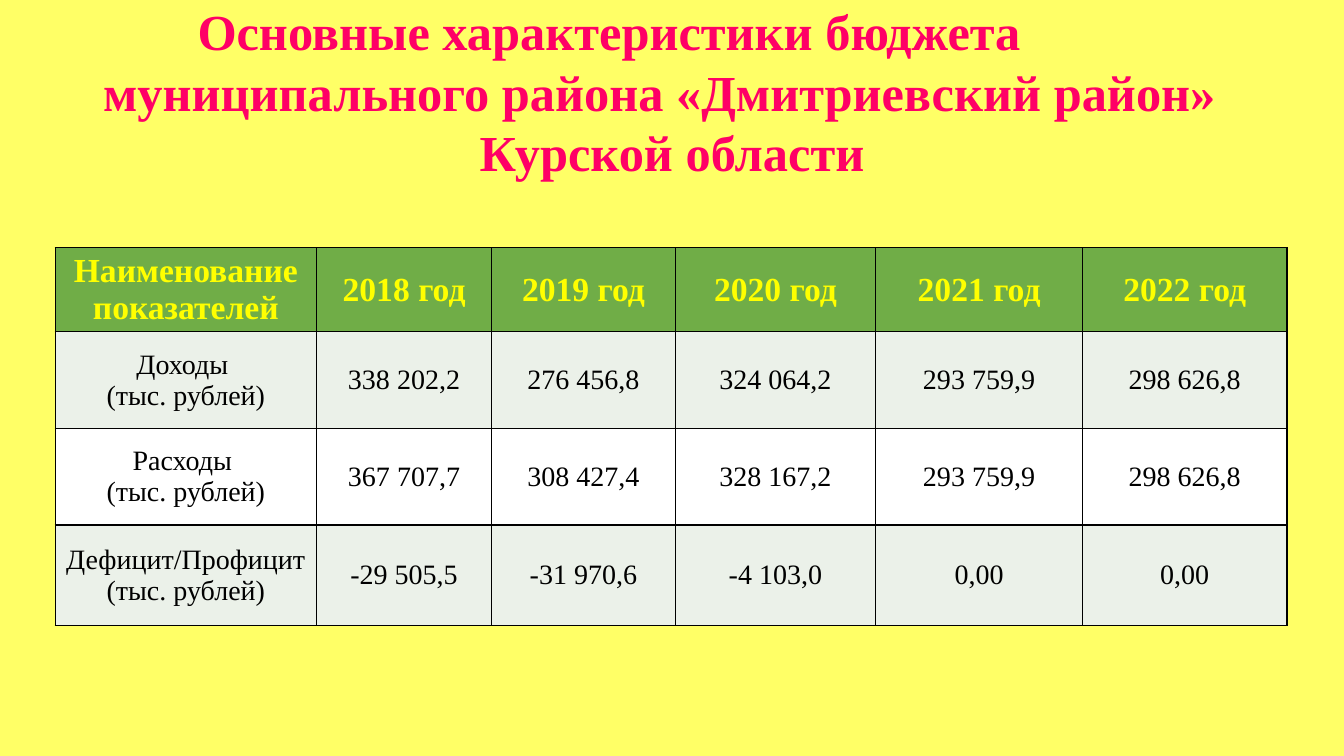
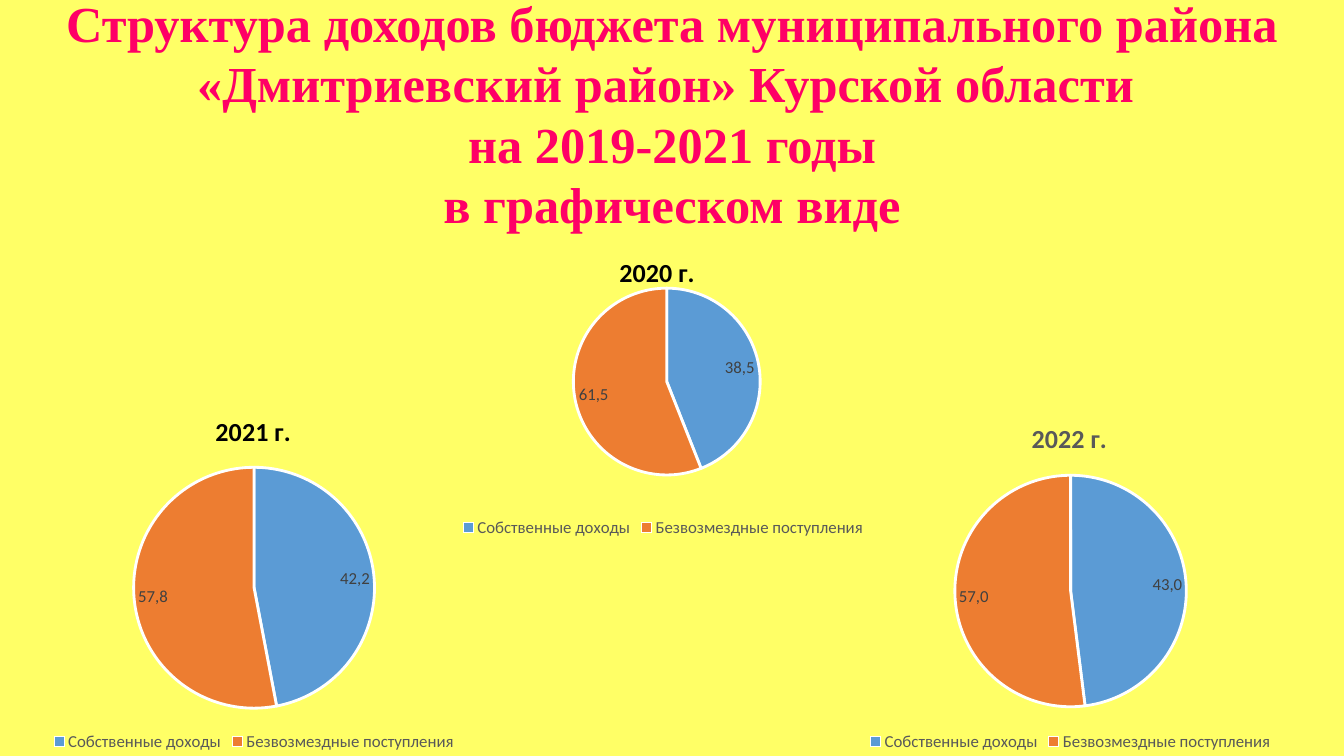
from lxml import etree
from pptx import Presentation
from pptx.chart import data as chart_data
from pptx.dml import color
from pptx.enum import chart as chart_enum, text
from pptx.oxml import ns
from pptx.util import Pt

WIDTH, HEIGHT = 960, 540
SERIF, SANS = "Times New Roman", "Calibri"
BACKGROUND, PINK, YELLOW = "FFFF66", "FF0066", "FFFF00"
GREEN, PALE, WHITE, BLACK = "70AD47", "EBF1E9", "FFFFFF", "000000"
BLUE, ORANGE, GREY, DARK_GREY = "5B9BD5", "ED7D31", "595959", "404040"

COLUMN_WIDTHS = [186.5, 125.3, 131, 143.3, 147.6, 146.2]
ROW_HEIGHTS = [60, 69, 69, 72]
BUDGET = [
    ["Наименование показателей"] + [f"{year} год" for year in range(2018, 2023)],
    ["Доходы \n(тыс. рублей)", "338 202,2", "276 456,8", "324 064,2", "293 759,9", "298 626,8"],
    ["Расходы \n(тыс. рублей)", "367 707,7", "308 427,4", "328 167,2", "293 759,9", "298 626,8"],
    ["Дефицит/Профицит\n(тыс. рублей)", "-29 505,5", "-31 970,6", "-4 103,0", "0,00", "0,00"],
]
ROW_FILLS = [GREEN, PALE, WHITE, PALE]

CATEGORIES = ["Собственные доходы", "Безвозмездные поступления"]
INCOME_CHARTS = [
    ("2020 г.", BLACK, 0.43, (225.4, 171.4, 496.8, 215.3), (0.02, 0.16, 0.97, 0.62), (44, 56), ("38,5", "61,5")),
    ("2021 г.", BLACK, 0.41, (9.4, 284.4, 344.2, 255.6), (0.25, 0.19, 0.5, 0.68), (47, 53), ("42,2", "57,8")),
    ("2022 г.", GREY, 0.42, (569.5, 289.4, 390.5, 250.6), (0.28, 0.2, 0.44, 0.66), (48, 52), ("43,0", "57,0")),
]


def rgb(value):
    return color.RGBColor.from_string(value)


def style_font(font, name, size, value, bold=False):
    font.name, font.size, font.bold = name, Pt(size), bold
    font.color.rgb = rgb(value)


def add_slide(presentation):
    slide = presentation.slides.add_slide(presentation.slide_layouts[6])
    slide.background.fill.solid()
    slide.background.fill.fore_color.rgb = rgb(BACKGROUND)
    return slide


def add_title(slide, height, lines, indents=()):
    shape = slide.shapes.add_textbox(0, 0, Pt(WIDTH), Pt(height))
    frame = shape.text_frame
    frame.word_wrap = True
    frame.vertical_anchor = text.MSO_ANCHOR.MIDDLE
    frame.text = "\n".join(lines)
    for paragraph in frame.paragraphs:
        paragraph.alignment = text.PP_ALIGN.CENTER
        paragraph.line_spacing = Pt(43.2)
        style_font(paragraph.runs[0].font, SERIF, 36, PINK, True)
    for paragraph, indent in zip(frame.paragraphs, indents):
        paragraph.alignment = text.PP_ALIGN.LEFT
        paragraph._p.get_or_add_pPr().set("marL", str(Pt(indent)))


def add_borders(cell):
    properties = cell._tc.get_or_add_tcPr()
    for position, side in enumerate("LRTB"):
        line = etree.Element(ns.qn(f"a:ln{side}"), w=str(Pt(1)))
        fill = etree.SubElement(line, ns.qn("a:solidFill"))
        etree.SubElement(fill, ns.qn("a:srgbClr"), val=BLACK)
        properties.insert(position, line)


def fill_cell(cell, content, fill, size, value, bold):
    cell.text_frame.text = content
    cell.vertical_anchor = text.MSO_ANCHOR.MIDDLE
    cell.margin_left = cell.margin_right = Pt(5)
    cell.margin_top = cell.margin_bottom = 0
    cell.fill.solid()
    cell.fill.fore_color.rgb = rgb(fill)
    for paragraph in cell.text_frame.paragraphs:
        paragraph.alignment = text.PP_ALIGN.CENTER
        style_font(paragraph.runs[0].font, SERIF, size, value, bold)
    add_borders(cell)


def add_budget_table(slide, left, top):
    table = slide.shapes.add_table(
        len(ROW_HEIGHTS), len(COLUMN_WIDTHS), Pt(left), Pt(top),
        Pt(sum(COLUMN_WIDTHS)), Pt(sum(ROW_HEIGHTS))).table
    for column, width in zip(table.columns, COLUMN_WIDTHS):
        column.width = Pt(width)
    for row, height, contents, fill in zip(table.rows, ROW_HEIGHTS, BUDGET, ROW_FILLS):
        row.height = Pt(height)
        style = (24, YELLOW, True) if fill == GREEN else (20, BLACK, False)
        for cell, content in zip(row.cells, contents):
            fill_cell(cell, content, fill, *style)


def set_layout(parent, position, settings):
    for old_layout in parent.findall(ns.qn("c:layout")):
        parent.remove(old_layout)
    layout = etree.Element(ns.qn("c:layout"))
    manual = etree.SubElement(layout, ns.qn("c:manualLayout"))
    for name, value in settings.items():
        etree.SubElement(manual, ns.qn(f"c:{name}"), val=str(value))
    parent.insert(position, layout)


def add_chart_title(chart, title, value, left):
    chart.has_title = True
    frame = chart.chart_title.text_frame
    frame.text = title
    style_font(frame.paragraphs[0].runs[0].font, SANS, 18.6, value, True)
    set_layout(chart.chart_title._element, 1, {
        "xMode": "edge", "yMode": "edge", "x": left, "y": 0.03})


def style_slice(point, fill, label):
    point.format.fill.solid()
    point.format.fill.fore_color.rgb = rgb(fill)
    point.format.line.color.rgb = rgb(WHITE)
    point.format.line.width = Pt(2)
    frame = point.data_label.text_frame
    frame.text = label
    style_font(frame.paragraphs[0].runs[0].font, SANS, 12, DARK_GREY)
    point.data_label.position = chart_enum.XL_LABEL_POSITION.BEST_FIT


def add_income_pie(slide, title, title_color, title_left, box, plot_box, values, labels):
    source = chart_data.CategoryChartData()
    source.categories = CATEGORIES
    source.add_series("Доходы", values)
    chart = slide.shapes.add_chart(
        chart_enum.XL_CHART_TYPE.PIE, *map(Pt, box), source).chart
    style_font(chart.font, SANS, 10, BLACK)
    add_chart_title(chart, title, title_color, title_left)
    chart.has_legend = True
    chart.legend.position = chart_enum.XL_LEGEND_POSITION.BOTTOM
    chart.legend.include_in_layout = False
    style_font(chart.legend.font, SANS, 12, GREY)
    plot = chart.plots[0]
    plot.vary_by_categories = True
    for index, (fill, label) in enumerate(zip((BLUE, ORANGE), labels)):
        style_slice(plot.series[0].points[index], fill, label)
    plot_area = chart._chartSpace.find(".//" + ns.qn("c:plotArea"))
    set_layout(plot_area, 0, {
        "layoutTarget": "inner", "xMode": "edge", "yMode": "edge",
        **dict(zip("xywh", plot_box))})


def main():
    presentation = Presentation()
    presentation.slide_width, presentation.slide_height = Pt(WIDTH), Pt(HEIGHT)

    budget_slide = add_slide(presentation)
    add_title(budget_slide, 130, [
        "Основные характеристики бюджета",
        "муниципального района «Дмитриевский район»",
        "Курской области"], indents=(134, 66.5))
    add_budget_table(budget_slide, 39.5, 177)

    income_slide = add_slide(presentation)
    add_title(income_slide, 161, [
        "Структура доходов бюджета муниципального района",
        "«Дмитриевский район» Курской области ",
        "на 2019-2021 годы",
        "в графическом виде"])
    for income_chart in INCOME_CHARTS:
        add_income_pie(income_slide, *income_chart)

    presentation.save("out.pptx")


if __name__ == "__main__":
    main()
